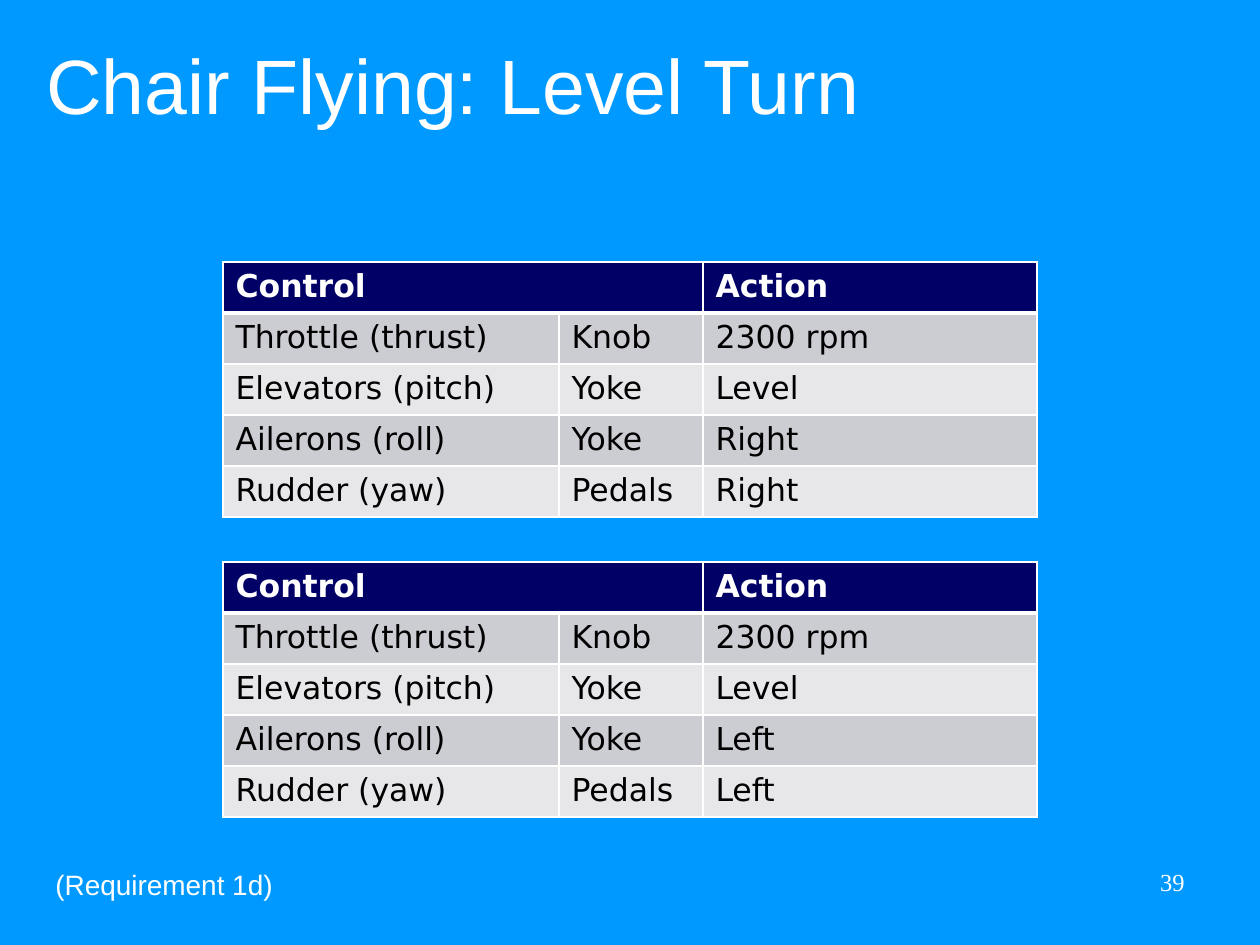
import lxml.etree
import pptx
import pptx.dml.color
import pptx.enum.text
import pptx.oxml.ns
import pptx.util

RGBColor = pptx.dml.color.RGBColor
ANCHOR = pptx.enum.text.MSO_ANCHOR
ALIGN = pptx.enum.text.PP_ALIGN

SKY = RGBColor(0x00, 0x99, 0xFF)
NAVY = RGBColor(0x00, 0x00, 0x66)
WHITE = RGBColor(0xFF, 0xFF, 0xFF)
BLACK = RGBColor(0x00, 0x00, 0x00)
BANDS = [RGBColor(0xCC, 0xCC, 0xD3), RGBColor(0xE7, 0xE7, 0xEA)]

PX_PER_INCH = 126


def px(length):
    return pptx.util.Emu(round(length * 914400 / PX_PER_INCH))


class SlideBuilder:
    """Holds the style and the current slide."""

    table_font = "DejaVu Sans"
    table_size = 18
    column_widths = [336, 144, 334]
    row_height = 51

    def __init__(self, page):
        self.page = page
        page.background.fill.solid()
        page.background.fill.fore_color.rgb = SKY

    def style(self, para, font, size, color, bold=False):
        for span in para.runs:
            span.font.name = font
            span.font.size = pptx.util.Pt(size)
            span.font.color.rgb = color
            span.font.bold = bold

    def text(self, words, left, top, width, height, font, size,
             anchor=ANCHOR.TOP, align=ALIGN.LEFT, wrap=True):
        box = self.page.shapes.add_textbox(px(left), px(top), px(width), px(height))
        frame = box.text_frame
        frame.text = words
        frame.word_wrap = wrap
        frame.vertical_anchor = anchor
        para = frame.paragraphs[0]
        para.alignment = align
        self.style(para, font, size, WHITE)

    def borders(self, cell, top=1, bottom=1):
        properties = cell._tc.get_or_add_tcPr()
        qn = pptx.oxml.ns.qn
        sides = [("lnL", 1), ("lnR", 1), ("lnT", top), ("lnB", bottom)]
        for position, (side, points) in enumerate(sides):
            line = lxml.etree.Element(qn(f"a:{side}"), w=str(pptx.util.Pt(points)))
            fill = lxml.etree.SubElement(line, qn("a:solidFill"))
            lxml.etree.SubElement(fill, qn("a:srgbClr"), val=str(WHITE))
            properties.insert(position, line)

    def table(self, rows, left, top):
        frame = self.page.shapes.add_table(
            len(rows), len(self.column_widths), px(left), px(top),
            px(sum(self.column_widths)), px(self.row_height * len(rows)))
        table = frame.table
        for column, width in zip(table.columns, self.column_widths):
            column.width = px(width)
        for index, words in enumerate(rows):
            table.rows[index].height = px(self.row_height)
            header = index == 0
            for cell, word in zip(table.rows[index].cells, words):
                cell.text = word
                cell.fill.solid()
                cell.fill.fore_color.rgb = NAVY if header else BANDS[(index - 1) % 2]
                self.borders(cell, top=3 if index == 1 else 1, bottom=3 if header else 1)
                self.style(cell.text_frame.paragraphs[0], self.table_font,
                           self.table_size, WHITE if header else BLACK, header)
        table.cell(0, 0).merge(table.cell(0, 1))


def control_rows(direction):
    return [
        ("Control", "", "Action"),
        ("Throttle (thrust)", "Knob", "2300 rpm"),
        ("Elevators (pitch)", "Yoke", "Level"),
        ("Ailerons (roll)", "Yoke", direction),
        ("Rudder (yaw)", "Pedals", direction),
    ]


def main():
    deck = pptx.Presentation()
    deck.slide_width, deck.slide_height = px(1260), px(945)
    builder = SlideBuilder(deck.slides.add_slide(deck.slide_layouts[6]))

    # Title
    builder.text("Chair Flying: Level Turn", 34, 16, 1191, 120, "Arial", 44,
                 anchor=ANCHOR.BOTTOM)

    # Footer: slide number and requirement
    builder.text("39", 903, 861, 294, 66, "Times New Roman", 14, align=ALIGN.RIGHT)
    builder.text("(Requirement 1d)", 43, 861, 246, 47, "Arial", 16,
                 anchor=ANCHOR.MIDDLE, wrap=False)

    # One control table for each turn direction
    for direction, top in [("Right", 262), ("Left", 562)]:
        builder.table(control_rows(direction), 223, top)

    deck.save("out.pptx")


if __name__ == "__main__":
    main()
